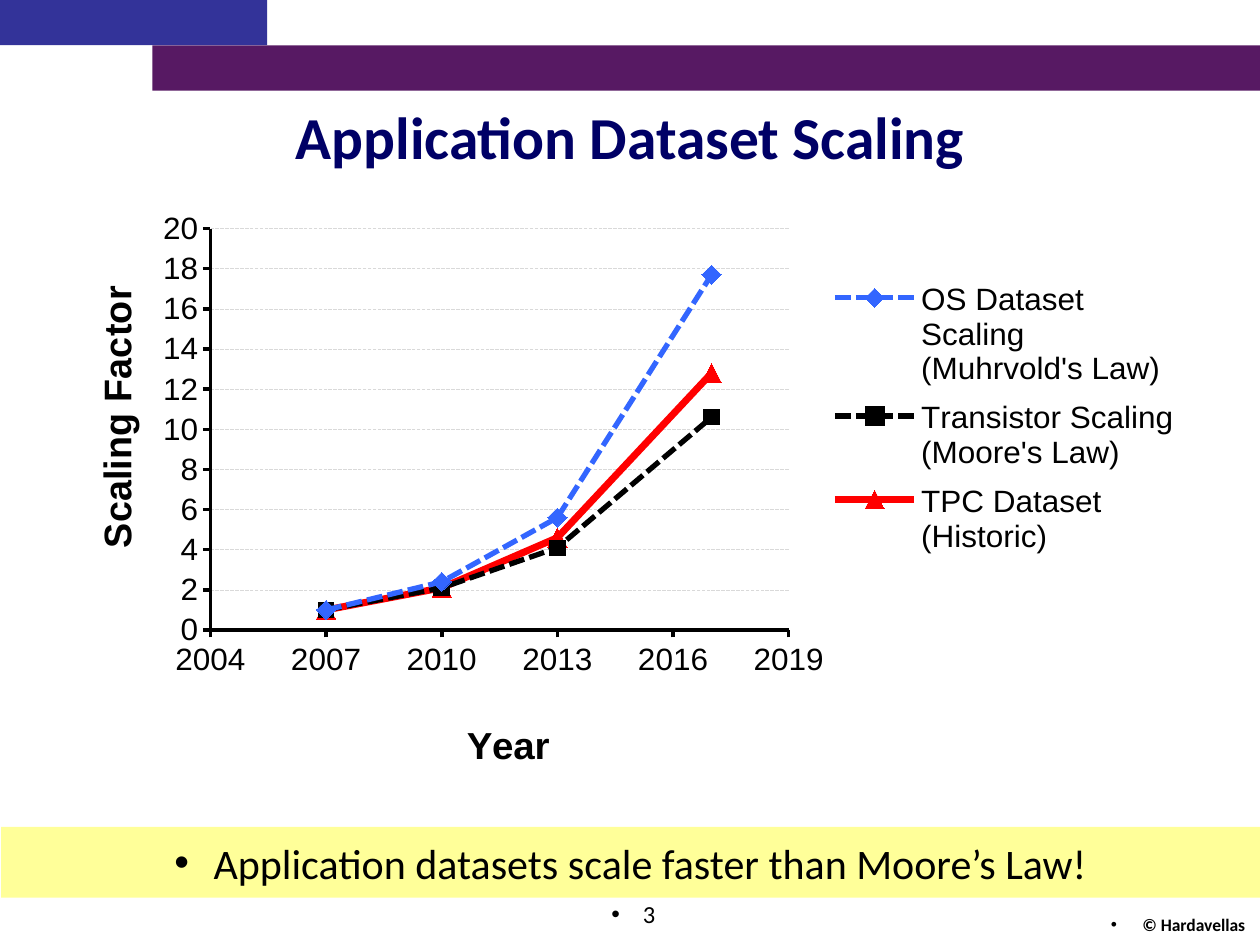
from lxml.etree import SubElement
from pptx import Presentation
from pptx.chart.data import XyChartData
from pptx.dml.color import RGBColor
from pptx.enum.chart import (XL_CHART_TYPE, XL_LEGEND_POSITION, XL_MARKER_STYLE,
                             XL_TICK_MARK)
from pptx.enum.dml import MSO_LINE
from pptx.enum.shapes import MSO_SHAPE
from pptx.enum.text import MSO_ANCHOR, PP_ALIGN
from pptx.oxml import parse_xml
from pptx.oxml.ns import nsdecls, qn
from pptx.util import Inches, Pt

WIDTH, HEIGHT = Inches(10), Inches(7.5)
BAND = 0.048  # height of one header band, as a share of the slide

COLORS = {
    "blue_band": "333399", "purple_band": "571963", "title": "000066",
    "text": "000000", "highlight": "FFFF99", "grid": "D9D9D9",
    "os": "3366FF", "transistor": "000000", "tpc": "FF0000",
}

YEARS = (2007, 2010, 2013, 2017)
# name, scaling factors, colour, line width, dash, marker, marker size
DATASETS = (
    ("OS Dataset Scaling (Muhrvold's Law)", (1, 2.4, 5.6, 17.7),
     "os", 3, MSO_LINE.SQUARE_DOT, XL_MARKER_STYLE.DIAMOND, 11),
    ("Transistor Scaling (Moore's Law)", (1, 2.1, 4.1, 10.6),
     "transistor", 3, MSO_LINE.SQUARE_DOT, XL_MARKER_STYLE.SQUARE, 9),
    ("TPC Dataset (Historic)", (1, 2.1, 4.6, 12.8),
     "tpc", 4, MSO_LINE.SOLID, XL_MARKER_STYLE.TRIANGLE, 11),
)


def color(name):
    return RGBColor.from_string(COLORS[name])


def box(x, y, w, h):
    """Turn shares of the slide into lengths."""
    return round(x * WIDTH), round(y * HEIGHT), round(w * WIDTH), round(h * HEIGHT)


def style_font(font, size, name="Arial", ink="text", bold=False):
    font.size, font.name, font.bold = Pt(size), name, bold
    font.color.rgb = color(ink)


def write(frame, text, size, ink="text", bold=False, align=PP_ALIGN.CENTER,
          anchor=MSO_ANCHOR.TOP, bullet_indent=None):
    frame.word_wrap = True
    frame.vertical_anchor = anchor
    paragraph = frame.paragraphs[0]
    paragraph.text = text
    paragraph.alignment = align
    if bullet_indent:
        props = paragraph._p.get_or_add_pPr()
        props.set("marL", str(Inches(bullet_indent)))
        props.set("indent", str(-Inches(bullet_indent)))
        SubElement(props, qn("a:buFont")).set("typeface", "Arial")
        SubElement(props, qn("a:buChar")).set("char", "•")
    style_font(paragraph.runs[0].font, size, "Calibri", ink, bold)


def add_band(slide, area, fill):
    band = slide.shapes.add_shape(MSO_SHAPE.RECTANGLE, *box(*area))
    band.shadow.inherit = False
    band.fill.solid()
    band.fill.fore_color.rgb = color(fill)
    band.line.fill.background()
    return band


def add_footer(slide, area, text, size, bold=False):
    footer = slide.shapes.add_textbox(*box(*area))
    write(footer.text_frame, text, size, bold=bold, align=PP_ALIGN.RIGHT,
          bullet_indent=0.25)


def place(element, inner=False, **shares):
    """Give a chart part a fixed place, in shares of the chart."""
    for old in element.findall(qn("c:layout")):
        element.remove(old)
    layout = parse_xml(f"<c:layout {nsdecls('c')}><c:manualLayout/></c:layout>")
    settings = [("layoutTarget", "inner")] if inner else []
    settings += [(f"{key}Mode", "edge") for key in ("x", "y")]
    settings += shares.items()
    for tag, value in settings:
        SubElement(layout[0], qn(f"c:{tag}")).set("val", str(value))
    overlay = element.find(qn("c:overlay"))
    if overlay is None:
        element.insert(0, layout)
    else:
        overlay.addprevious(layout)


def style_axis(axis, title, limits, title_x, title_y):
    axis.minimum_scale, axis.maximum_scale, axis.major_unit = limits
    axis.major_tick_mark = XL_TICK_MARK.OUTSIDE
    axis.minor_tick_mark = XL_TICK_MARK.NONE
    axis.has_major_gridlines = False
    axis.format.line.color.rgb = color("text")
    axis.format.line.width = Pt(2)
    axis.tick_labels.number_format = "General"
    axis.tick_labels.number_format_is_linked = False
    style_font(axis.tick_labels.font, 18)
    axis.axis_title.text_frame.text = title
    run = axis.axis_title.text_frame.paragraphs[0].runs[0]
    style_font(run.font, 22, bold=True)
    place(axis.axis_title._element, x=title_x, y=title_y)


def style_series(series, ink, width, dash, marker, marker_size):
    series.smooth = True
    series.format.line.color.rgb = color(ink)
    series.format.line.width = Pt(width)
    series.format.line.dash_style = dash
    series.marker.style = marker
    series.marker.size = marker_size
    series.marker.format.fill.solid()
    series.marker.format.fill.fore_color.rgb = color(ink)
    series.marker.format.line.color.rgb = color(ink)


def add_scaling_chart(slide, area):
    data = XyChartData(number_format="General")
    for name, factors, *_ in DATASETS:
        dataset = data.add_series(name)
        for year, factor in zip(YEARS, factors):
            dataset.add_data_point(year, factor)
    chart = slide.shapes.add_chart(
        XL_CHART_TYPE.XY_SCATTER_SMOOTH, *box(*area), data).chart
    chart.has_title = False
    style_font(chart.font, 18)
    chart.plots[0].vary_by_categories = False
    for series, (_, _, *look) in zip(chart.plots[0].series, DATASETS):
        style_series(series, *look)

    # Axes and grid
    style_axis(chart.category_axis, "Year", (2004, 2019, 3), 0.35, 0.91)
    style_axis(chart.value_axis, "Scaling Factor", (0, 20, 2), 0.02, 0.15)
    chart.value_axis.has_major_gridlines = True
    grid = chart.value_axis.major_gridlines.format.line
    grid.color.rgb = color("grid")
    grid.width = Pt(0.25)
    grid.dash_style = MSO_LINE.LONG_DASH

    # Legend and plot area
    chart.has_legend = True
    chart.legend.position = XL_LEGEND_POSITION.RIGHT
    chart.legend.include_in_layout = False
    style_font(chart.legend.font, 18)
    place(chart.legend._element, x=0.68, y=0.12, w=0.3, h=0.53)
    place(chart._chartSpace.chart.plotArea, inner=True,
          x=0.13, y=0.05, w=0.51, h=0.71)


def main():
    deck = Presentation()
    deck.slide_width, deck.slide_height = WIDTH, HEIGHT
    slide = deck.slides.add_slide(deck.slide_layouts[5])

    # Header bands and title
    add_band(slide, (0.121, BAND, 0.879, BAND), "purple_band")
    add_band(slide, (0, 0, 0.212, BAND), "blue_band")
    title = slide.shapes.title
    title.left, title.top, title.width, title.height = box(0, 2 * BAND, 1, 2 * BAND)
    write(title.text_frame, "Application Dataset Scaling", 34, ink="title",
          bold=True, anchor=MSO_ANCHOR.MIDDLE)

    add_scaling_chart(slide, (0.05, 0.212, 0.9, 0.612))

    # Conclusion
    conclusion = add_band(slide, (0.001, 0.875, 0.999, 0.075), "highlight")
    write(conclusion.text_frame, "Application datasets scale faster than Moore’s Law!",
          24, anchor=MSO_ANCHOR.MIDDLE, bullet_indent=0.31)

    # Footer
    add_footer(slide, (0.297, 0.945, 0.233, 0.05), "3", 14)
    add_footer(slide, (0.667, 0.961, 0.331, 0.033), "© Hardavellas", 10, bold=True)

    deck.save("out.pptx")


if __name__ == "__main__":
    main()
